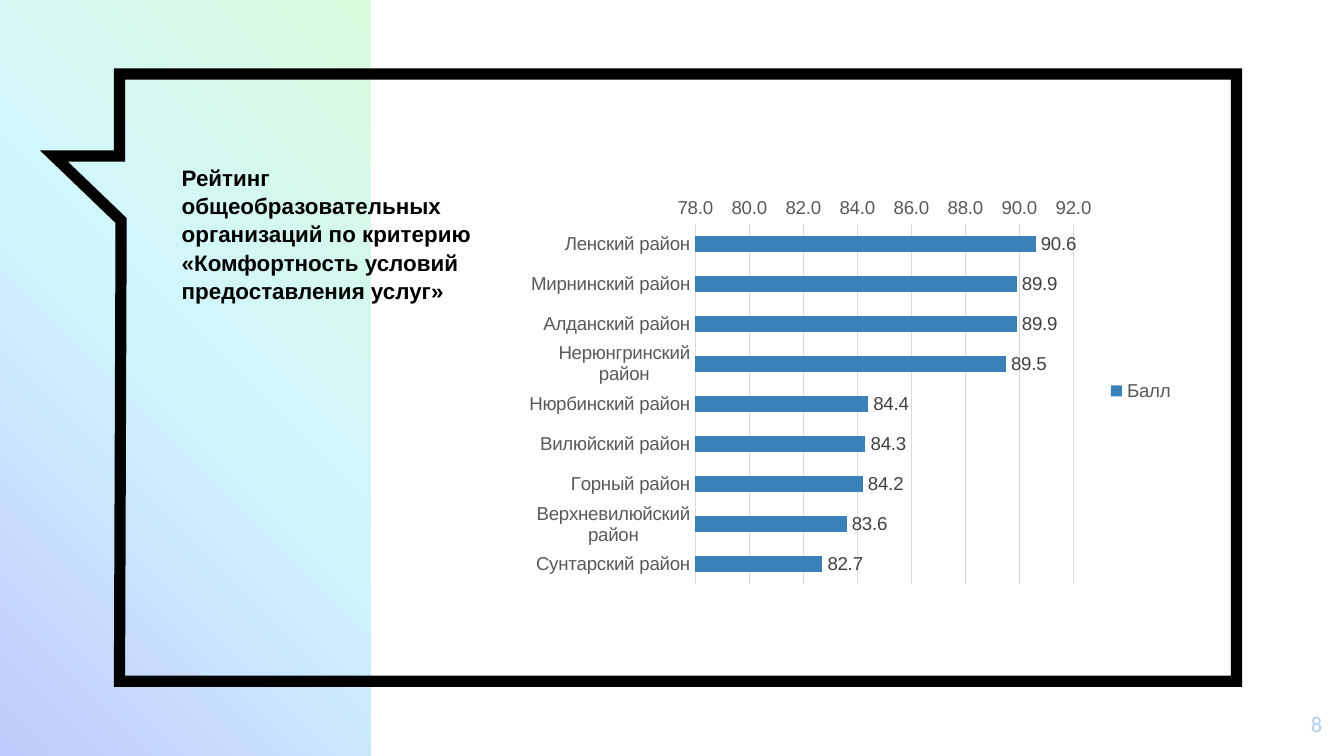
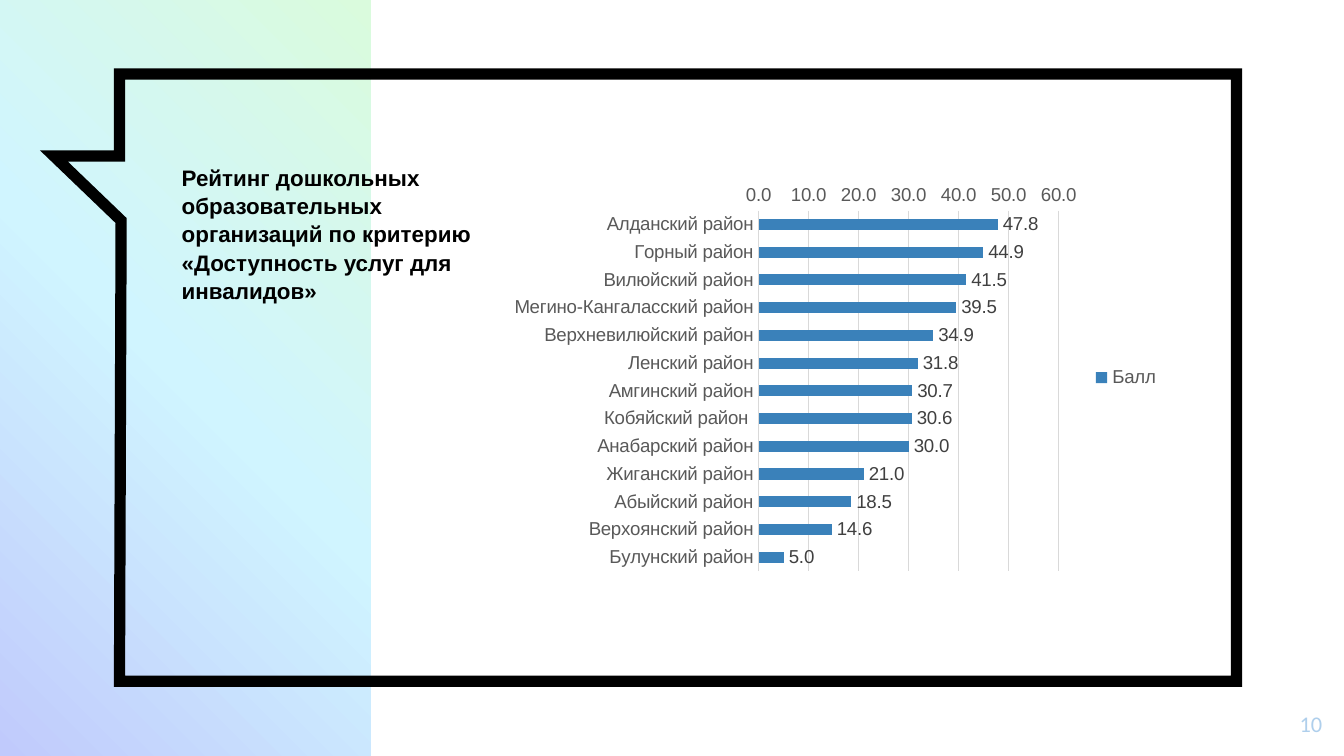
from lxml import etree
from pptx import Presentation
from pptx import util as u
from pptx.chart.data import CategoryChartData
from pptx.dml.color import RGBColor
from pptx.enum import chart as ch
from pptx.enum import shapes, text
from pptx.oxml.ns import qn
from pptx.util import Cm

LILAC = RGBColor(0xC0, 0xCA, 0xFC)
SKY = RGBColor(0xD0, 0xF5, 0xFF)
MINT = RGBColor(0xDA, 0xFB, 0xDD)
BLACK = RGBColor(0, 0, 0)
NUMBER_BLUE = RGBColor(0xAF, 0xCF, 0xEC)
BAR_BLUE = RGBColor(0x3A, 0x81, 0xBA)
AXIS_GREY = RGBColor(0x59, 0x59, 0x59)
LABEL_GREY = RGBColor(0x40, 0x40, 0x40)
GRID_GREY = RGBColor(0xD9, 0xD9, 0xD9)

SLIDE_WIDTH, SLIDE_HEIGHT = Cm(25.4), Cm(14.29)
TITLE_ONLY = 5
BUBBLE_POINTS = [(2.26, 1.4), (23.37, 1.4), (23.37, 12.88), (2.26, 12.88),
                 (2.29, 4.17), (1.02, 2.95), (2.26, 2.95)]

RATINGS = [
    {
        "number": "8",
        "title": "Рейтинг общеобразовательных организаций по критерию "
                 "«Комфортность условий предоставления услуг»",
        "corner": (9.75, 3.58),
        "scale": (78, 92, 2),
        "scores": {
            "Ленский район": 90.6,
            "Мирнинский район": 89.9,
            "Алданский район": 89.9,
            "Нерюнгринский район": 89.5,
            "Нюрбинский район": 84.4,
            "Вилюйский район": 84.3,
            "Горный район": 84.2,
            "Верхневилюйский район": 83.6,
            "Сунтарский район": 82.7,
        },
    },
    {
        "number": "10",
        "title": "Рейтинг дошкольных образовательных организаций по критерию "
                 "«Доступность услуг для инвалидов»",
        "corner": (9.47, 3.33),
        "scale": (0, 60, 10),
        "scores": {
            "Алданский район": 47.8,
            "Горный район": 44.9,
            "Вилюйский район": 41.5,
            "Мегино-Кангаласский район": 39.5,
            "Верхневилюйский район": 34.9,
            "Ленский район": 31.8,
            "Амгинский район": 30.7,
            "Кобяйский район ": 30.6,
            "Анабарский район": 30,
            "Жиганский район": 21,
            "Абыйский район": 18.5,
            "Верхоянский район": 14.6,
            "Булунский район": 5,
        },
    },
]


def set_font(font, name, size, color, bold=False):
    font.name = name
    font.size = u.Pt(size)
    font.bold = bold
    font.color.rgb = color


def set_line(line, color, width):
    line.color.rgb = color
    line.width = u.Pt(width)


def add_gradient_band(slide):
    band = slide.shapes.add_shape(shapes.MSO_SHAPE.RECTANGLE, 0, 0, Cm(7.01), SLIDE_HEIGHT)
    band.shadow.inherit = False
    band.line.fill.background()
    band.fill.gradient()
    band.fill.gradient_angle = 45
    stops = band.element.spPr.find(".//" + qn("a:gsLst"))
    stops.clear()
    for position, color in ((0, LILAC), (50, SKY), (100, MINT)):
        stop = etree.SubElement(stops, qn("a:gs"), pos=str(position * 1000))
        etree.SubElement(stop, qn("a:srgbClr"), val=str(color))
    return band


def add_bubble_frame(slide):
    start, *others = [(Cm(x), Cm(y)) for x, y in BUBBLE_POINTS]
    builder = slide.shapes.build_freeform(*start)
    builder.add_line_segments(others, close=True)
    frame = builder.convert_to_shape()
    frame.shadow.inherit = False
    frame.fill.background()
    set_line(frame.line, BLACK, 6)
    outline = frame.element.spPr.find(qn("a:ln"))
    etree.SubElement(outline, qn("a:miter"), lim="800000")
    return frame


def move_to_layout(layout, *decorations):
    """Make the decorations part of the layout, so every slide shows them."""
    for shape in decorations:
        layout.shapes.element.append(shape.element)


def set_title(slide, words):
    title = slide.shapes.title
    title.left, title.top, title.width, title.height = Cm(3.18), Cm(2.95), Cm(7.01), Cm(2.82)
    frame = title.text_frame
    frame.text = words
    frame.word_wrap = True
    frame.auto_size = text.MSO_AUTO_SIZE.NONE
    frame.vertical_anchor = text.MSO_ANCHOR.TOP
    paragraph = frame.paragraphs[0]
    paragraph.alignment = text.PP_ALIGN.LEFT
    paragraph.line_spacing = 1.05
    set_font(paragraph.runs[0].font, "Arial", 12, BLACK, bold=True)


def add_slide_number(slide, number):
    box = slide.shapes.add_textbox(Cm(23.72), Cm(13.18), Cm(1.52), Cm(1.09))
    frame = box.text_frame
    frame.word_wrap = True
    frame.margin_left = frame.margin_right = Cm(0.25)
    frame.margin_top = frame.margin_bottom = Cm(0.25)
    frame.text = number
    paragraph = frame.paragraphs[0]
    paragraph.alignment = text.PP_ALIGN.RIGHT
    set_font(paragraph.runs[0].font, "Calibri", 12, NUMBER_BLUE)


def format_axis(axis):
    axis.major_tick_mark = axis.minor_tick_mark = ch.XL_TICK_MARK.NONE
    set_font(axis.tick_labels.font, "Arial", 10, AXIS_GREY)


def add_score_chart(slide, scores, corner, scale):
    data = CategoryChartData(number_format="0.0")
    data.categories = list(scores)
    data.add_series("Балл", list(scores.values()))
    left, top = corner
    chart = slide.shapes.add_chart(ch.XL_CHART_TYPE.BAR_CLUSTERED, Cm(left), Cm(top),
                                   Cm(12.7), Cm(7.62), data).chart
    set_font(chart.font, "Arial", 10, BLACK)
    chart.has_title = False
    chart.has_legend = True
    chart.legend.position = ch.XL_LEGEND_POSITION.RIGHT
    chart.legend.include_in_layout = False
    set_font(chart.legend.font, "Arial", 10, AXIS_GREY)

    districts, points = chart.category_axis, chart.value_axis
    format_axis(districts)
    districts.reverse_order = True
    set_line(districts.format.line, GRID_GREY, 0.75)

    format_axis(points)
    points.minimum_scale, points.maximum_scale, points.major_unit = scale
    points.tick_labels.number_format = "0.0"
    points.tick_labels.number_format_is_linked = False
    points.format.line.fill.background()
    points.has_major_gridlines = True
    set_line(points.major_gridlines.format.line, GRID_GREY, 0.75)

    plot = chart.plots[0]
    plot.gap_width = 150
    plot.vary_by_categories = False
    fill = plot.series[0].format.fill
    fill.solid()
    fill.fore_color.rgb = BAR_BLUE
    plot.has_data_labels = True
    labels = plot.data_labels
    labels.show_value = True
    labels.number_format = "0.0"
    labels.number_format_is_linked = False
    labels.position = ch.XL_LABEL_POSITION.OUTSIDE_END
    set_font(labels.font, "Arial", 10, LABEL_GREY)


def main():
    presentation = Presentation()
    presentation.slide_width, presentation.slide_height = SLIDE_WIDTH, SLIDE_HEIGHT
    layout = presentation.slide_layouts[TITLE_ONLY]
    slides = [presentation.slides.add_slide(layout) for _ in RATINGS]
    move_to_layout(layout, add_gradient_band(slides[0]), add_bubble_frame(slides[0]))
    for slide, rating in zip(slides, RATINGS):
        add_slide_number(slide, rating["number"])
        set_title(slide, rating["title"])
        add_score_chart(slide, rating["scores"], rating["corner"], rating["scale"])
    presentation.save("out.pptx")


if __name__ == "__main__":
    main()
